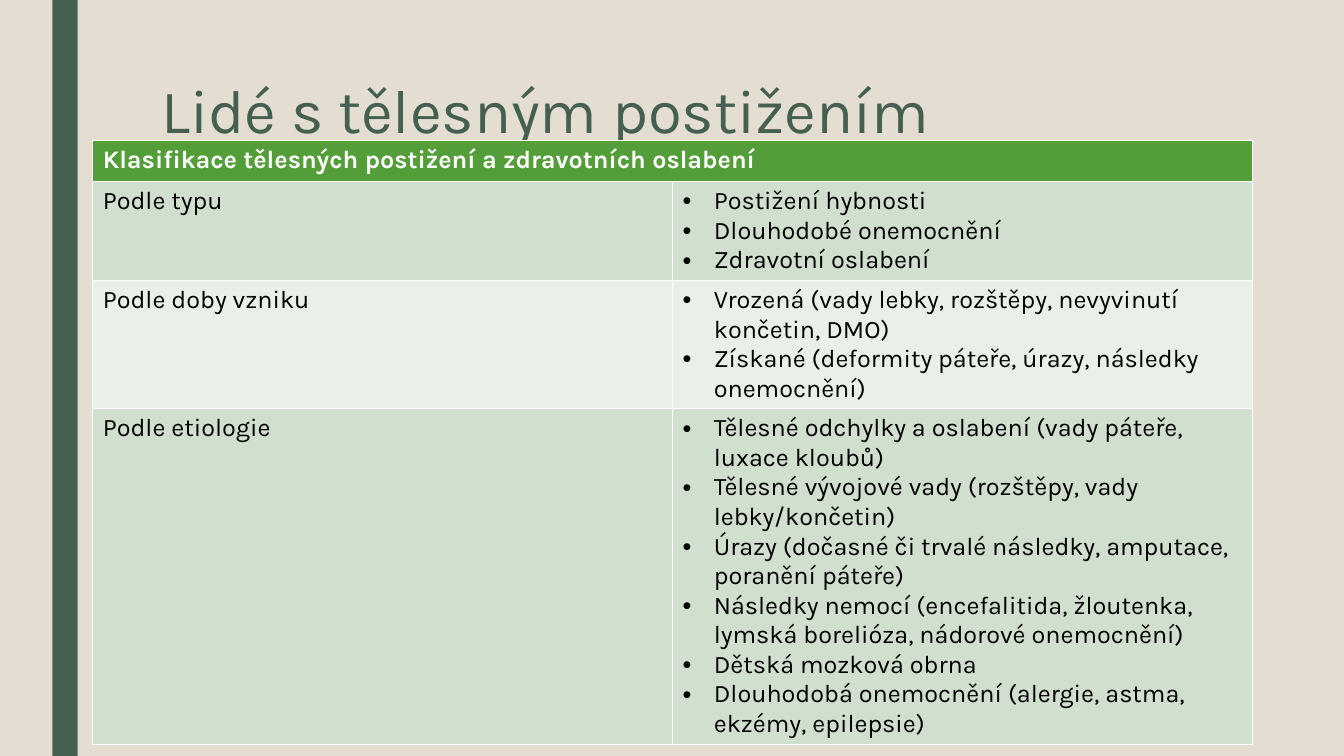
from lxml import etree
from pptx import Presentation
from pptx.dml.color import RGBColor
from pptx.enum import shapes, text
from pptx.oxml import ns
from pptx.util import Inches, Pt

TITLE = "Lidé s tělesným postižením"
HEADING = "Klasifikace tělesných postižení a zdravotních oslabení"
CLASSES = [
    ("Podle typu", 0.98, [
        "Postižení hybnosti",
        "Dlouhodobé onemocnění",
        "Zdravotní oslabení",
    ]),
    ("Podle doby vzniku", 1.27, [
        "Vrozená (vady lebky, rozštěpy, nevyvinutí končetin, DMO)",
        "Získané (deformity páteře, úrazy, následky onemocnění)",
    ]),
    ("Podle etiologie", 3.33, [
        "Tělesné odchylky a oslabení (vady páteře, luxace kloubů)",
        "Tělesné vývojové vady (rozštěpy, vady lebky/končetin)",
        "Úrazy (dočasné či trvalé následky, amputace, poranění páteře)",
        "Následky nemocí (encefalitida, žloutenka, lymská borelióza, nádorové onemocnění)",
        "Dětská mozková obrna",
        "Dlouhodobá onemocnění (alergie, astma, ekzémy, epilepsie)",
    ]),
]
FONT = "Karla"
SAND = RGBColor(0xE3, 0xDE, 0xD1)
PINE = RGBColor(0x45, 0x5F, 0x51)
GREEN = RGBColor(0x54, 0x9E, 0x39)
BANDS = [RGBColor(0xD1, 0xDF, 0xCE), RGBColor(0xE9, 0xF0, 0xE8)]
WHITE = RGBColor(0xFF, 0xFF, 0xFF)
BLACK = RGBColor(0, 0, 0)
HEADING_HEIGHT = 0.41
COLUMN_WIDTH = 5.75


def set_font(para, size, color, bold=False):
    para.font.name = FONT
    para.font.size = Pt(size)
    para.font.bold = bold
    para.font.color.rgb = color


def add_bullet(para):
    properties = para._p.get_or_add_pPr()
    properties.set("marL", str(Inches(0.31)))
    properties.set("indent", str(-Inches(0.31)))
    etree.SubElement(properties, ns.qn("a:buFont")).set("typeface", "Arial")
    etree.SubElement(properties, ns.qn("a:buChar")).set("char", "•")


def fill_cell(cell, lines, fill, color=BLACK, bold=False, bulleted=False):
    cell.fill.solid()
    cell.fill.fore_color.rgb = fill
    cell.text = "\n".join(lines)
    for para in cell.text_frame.paragraphs:
        if bulleted:
            add_bullet(para)
        set_font(para, 18, color, bold)


def add_title(page):
    title = page.shapes.title
    title.left, title.top = Inches(1.5), Inches(0.75)
    title.width, title.height = Inches(10.5), Inches(1.62)
    frame = title.text_frame
    frame.text = TITLE
    frame.auto_size = text.MSO_AUTO_SIZE.NONE
    frame.vertical_anchor = text.MSO_ANCHOR.TOP
    para = frame.paragraphs[0]
    para.alignment = text.PP_ALIGN.LEFT
    para.line_spacing = 0.89
    set_font(para, 44, PINE)


def add_stripe(page):
    stripe = page.shapes.add_shape(
        shapes.MSO_SHAPE.RECTANGLE, Inches(0.52), 0, Inches(0.25), Inches(7.5))
    stripe.shadow.inherit = False
    stripe.fill.solid()
    stripe.fill.fore_color.rgb = PINE
    stripe.line.fill.background()


def add_classification(page):
    heights = [HEADING_HEIGHT] + [height for _, height, _ in CLASSES]
    table = page.shapes.add_table(
        len(heights), 2, Inches(0.92), Inches(1.39),
        Inches(2 * COLUMN_WIDTH), Inches(sum(heights))).table
    for row, height in zip(table.rows, heights):
        row.height = Inches(height)
    table.cell(0, 0).merge(table.cell(0, 1))
    fill_cell(table.cell(0, 0), [HEADING], GREEN, WHITE, bold=True)
    for index, (label, _, items) in enumerate(CLASSES):
        band = BANDS[index % 2]
        fill_cell(table.cell(index + 1, 0), [label], band)
        fill_cell(table.cell(index + 1, 1), items, band, bulleted=True)


def main():
    deck = Presentation()
    deck.slide_width, deck.slide_height = Inches(13.33), Inches(7.5)
    page = deck.slides.add_slide(deck.slide_layouts[5])
    page.background.fill.solid()
    page.background.fill.fore_color.rgb = SAND
    add_stripe(page)
    add_title(page)
    add_classification(page)
    deck.save("out.pptx")


if __name__ == "__main__":
    main()
